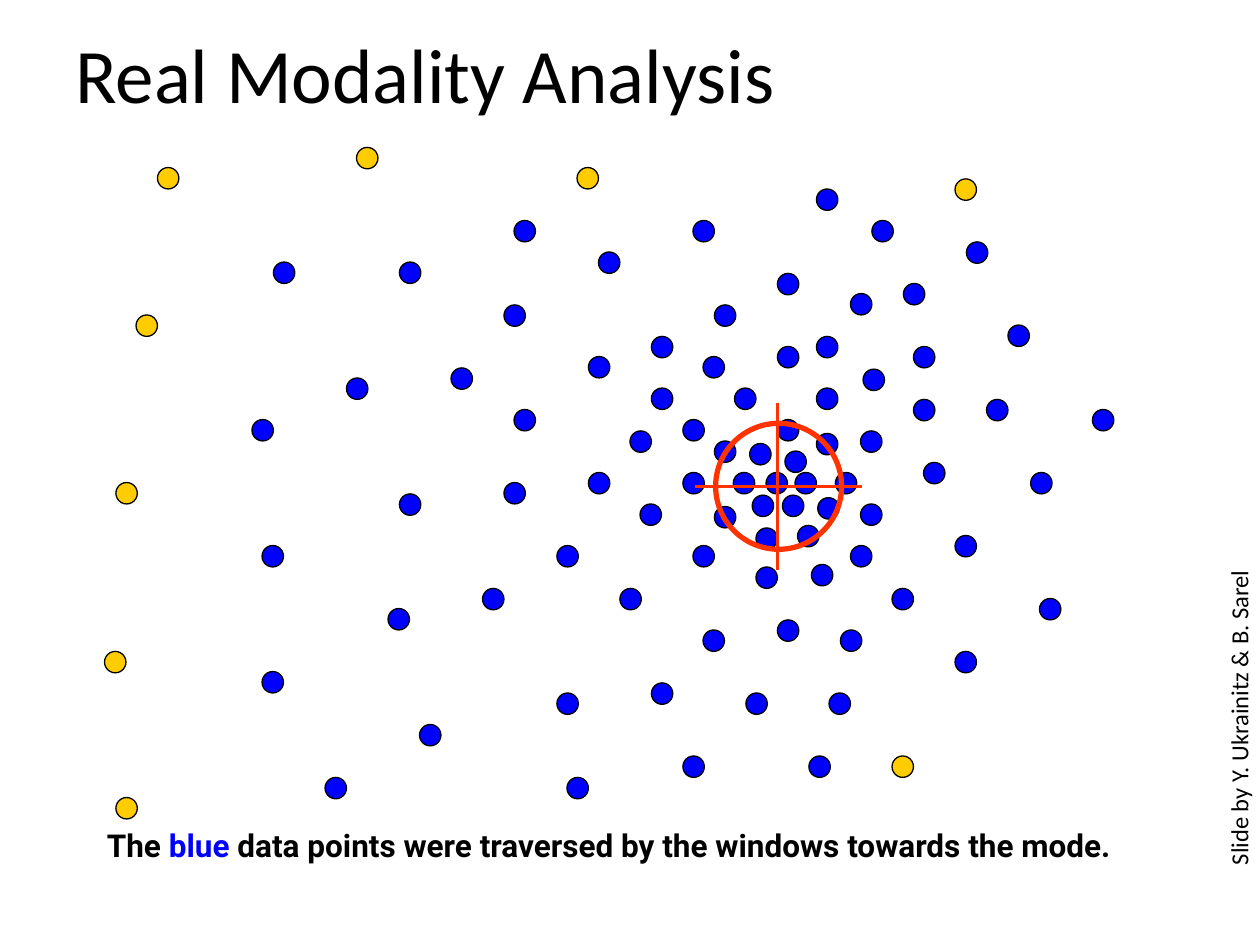
from pptx import Presentation
from pptx import util as u
from pptx.dml.color import RGBColor
from pptx.enum import shapes, text
from pptx.oxml import parse_xml
from pptx.oxml.ns import nsdecls

W, H = 10, 7.5
DOT = 0.17
COLORS = {"black": "000000", "blue": "0000FF", "yellow": "FFCC00", "red": "FF3300"}

TITLE = [("Real Modality Analysis", "black")]
CAPTION = [("The ", "black"), ("blue ", "blue"),
           ("data points were traversed by the windows towards the mode.", "black")]
CREDIT = [("Slide by Y. Ukrainitz & B. Sarel", "black")]

# Left and top of each data point, in inches
POINTS = {
    "blue": [
        (6.08, 3.75), (6.31, 3.75), (6.23, 3.58), (5.95, 3.52), (6.21, 3.93), (5.97, 3.93),
        (6.49, 3.95), (5.82, 3.75), (6.63, 3.75), (6.48, 3.44), (6.17, 3.33), (6.33, 4.17),
        (6, 4.19), (5.67, 4.02), (5.42, 3.75), (5.67, 3.5), (6.83, 4), (6.75, 4.33),
        (6.44, 4.48), (6, 4.5), (5.5, 4.33), (5.08, 4), (5, 3.42), (5.42, 3.33),
        (5.83, 3.08), (6.48, 3.08), (6.17, 2.75), (5.17, 3.08), (5.58, 2.83), (6.17, 2.17),
        (5.67, 2.42), (6.48, 2.67), (6.48, 1.5), (6.75, 2.33), (6.85, 2.93), (6.83, 3.42),
        (7.25, 3.17), (7.25, 2.75), (7.17, 2.25), (6.92, 1.75), (7.67, 1.92), (8, 2.58),
        (7.33, 3.67), (7.83, 3.17), (8.67, 3.25), (7.58, 4.25), (8.18, 3.75), (7.08, 4.67),
        (8.25, 4.75), (7.58, 5.17), (6.67, 5), (6.17, 4.92), (6.58, 5.5), (6.42, 6),
        (5.92, 5.5), (5.58, 5), (4.92, 4.67), (5.17, 5.42), (5.42, 6), (4.5, 6.17),
        (4.42, 5.5), (3.83, 4.67), (4.42, 4.33), (4.67, 3.75), (4.08, 3.25), (4.67, 2.83),
        (5.17, 2.67), (4.75, 2), (5.5, 1.75), (4.08, 1.75), (4, 2.42), (3.58, 2.92),
        (4, 3.83), (3.17, 3.92), (3.08, 4.83), (3.33, 5.75), (2.58, 6.17), (2.08, 5.33),
        (2.08, 4.33), (2.75, 3), (3.17, 2.08), (2.17, 2.08), (2, 3.33),
    ],
    "yellow": [
        (7.58, 1.42), (7.08, 6), (4.58, 1.33), (0.83, 5.17), (0.92, 6.33), (0.92, 3.83),
        (1.08, 2.5), (1.25, 1.33), (2.83, 1.17),
    ],
}
MODE = (6.18, 3.86)
WINDOW = 1
CROSS = 1.33


def rgb(name):
    return RGBColor.from_string(COLORS[name])


def add_circle(s, x, y, size, line, width, fill=None):
    sp = s.shapes.add_shape(shapes.MSO_SHAPE.OVAL, *map(u.Inches, (x, y, size, size)))
    sp.shadow.inherit = False
    if fill:
        sp.fill.solid()
        sp.fill.fore_color.rgb = rgb(fill)
    else:
        sp.fill.background()
    sp.line.color.rgb = rgb(line)
    sp.line.width = u.Pt(width)


def add_line(s, *ends):
    c = s.shapes.add_connector(shapes.MSO_CONNECTOR.STRAIGHT, *map(u.Inches, ends))
    c.line.color.rgb = rgb("red")
    c.line.width = u.Pt(1.5)
    c._element.spPr.append(parse_xml(f"<a:effectLst {nsdecls('a')}/>"))


def add_text(s, runs, box, size, font="Calibri", bold=False, rotation=0,
             wrap=False, anchor=text.MSO_ANCHOR.TOP, spacing=None):
    sp = s.shapes.add_textbox(*map(u.Inches, box))
    sp.rotation = rotation
    tf = sp.text_frame
    tf.word_wrap = wrap
    tf.auto_size = text.MSO_AUTO_SIZE.NONE if wrap else text.MSO_AUTO_SIZE.SHAPE_TO_FIT_TEXT
    tf.vertical_anchor = anchor
    p = tf.paragraphs[0]
    p.line_spacing = spacing
    for words, color in runs:
        r = p.add_run()
        r.text = words
        r.font.name, r.font.size, r.font.bold = font, u.Pt(size), bold
        r.font.color.rgb = rgb(color)


def main():
    prs = Presentation()
    prs.slide_width, prs.slide_height = u.Inches(W), u.Inches(H)
    s = prs.slides.add_slide(prs.slide_layouts[6])

    for color, corners in POINTS.items():
        for x, y in corners:
            add_circle(s, x, y, DOT, "black", 0.75, fill=color)

    cx, cy = MODE
    add_circle(s, cx - WINDOW / 2, cy - WINDOW / 2, WINDOW, "red", 3)
    arm = CROSS / 2
    add_line(s, cx - 0.01, cy - arm, cx - 0.01, cy + arm)
    add_line(s, cx - arm, cy, cx + arm, cy)

    add_text(s, CAPTION, (0.75, 6.51, 8.73, 0.4), 18, font="Roboto", bold=True)
    add_text(s, CREDIT, (8.33, 5.29, 3.01, 0.34), 14, rotation=270)
    add_text(s, TITLE, (0.05 * W, 0, 0.9 * W, H / 6), 44, wrap=True,
             anchor=text.MSO_ANCHOR.MIDDLE, spacing=0.9)
    prs.save("out.pptx")


if __name__ == "__main__":
    main()
